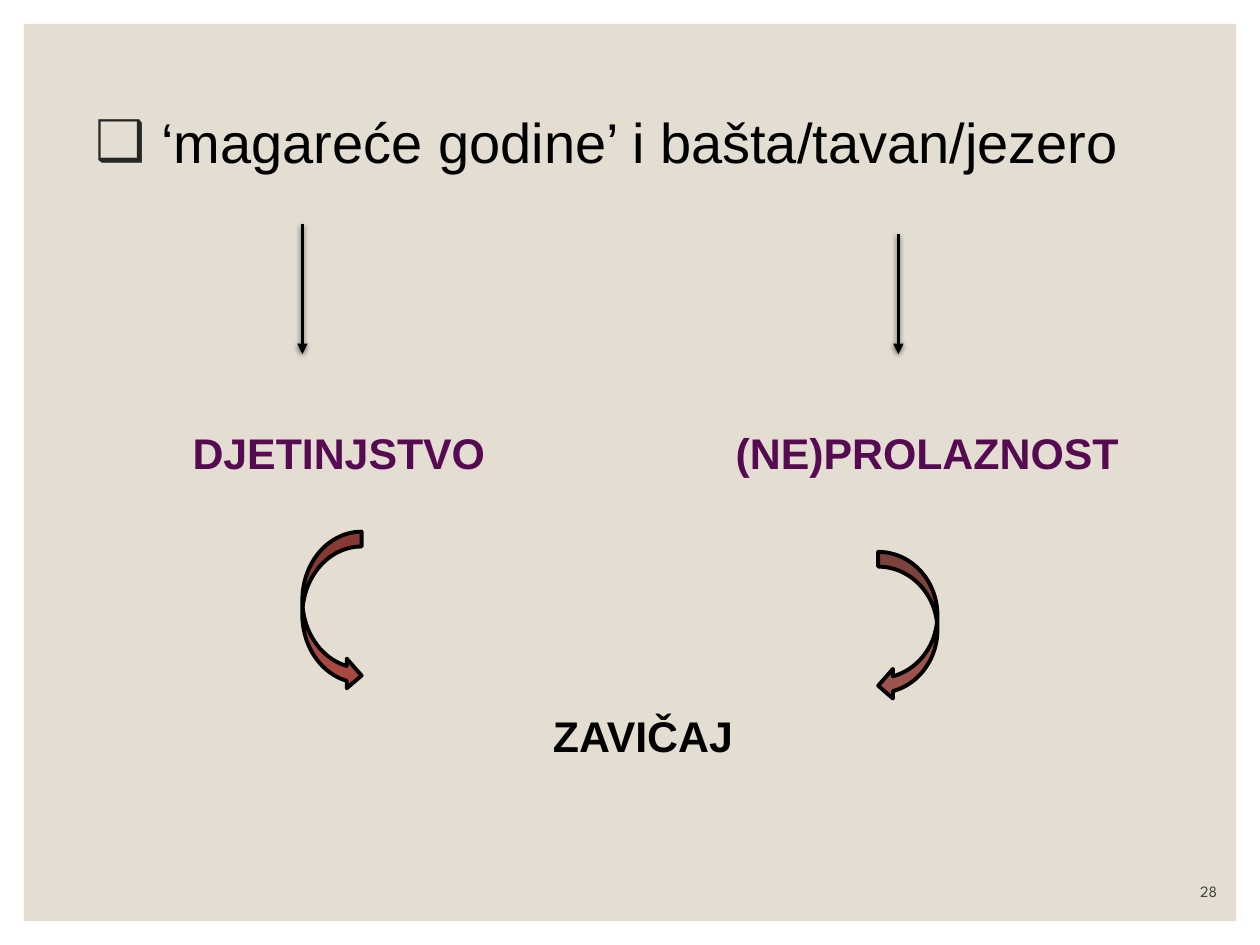
from lxml import etree
from pptx import Presentation
from pptx.dml.color import RGBColor
from pptx.enum.shapes import MSO_CONNECTOR, MSO_SHAPE
from pptx.enum.text import MSO_ANCHOR, MSO_AUTO_SIZE, PP_ALIGN
from pptx.oxml import parse_xml
from pptx.oxml.ns import nsdecls, qn
from pptx.util import Inches, Pt

BLACK = RGBColor(0x00, 0x00, 0x00)
SAND = RGBColor(0xE3, 0xDE, 0xD1)
PURPLE = RGBColor(0x56, 0x0A, 0x51)
GRAY = RGBColor(0x40, 0x40, 0x40)
BRICK = RGBColor(0xA9, 0x48, 0x41)
ROSE = RGBColor(0x9D, 0x53, 0x4D)

# Content
HEADING = "‘magareće godine’ i bašta/tavan/jezero"
BULLET, BULLET_COLOR = "❑", "262626"
PAGE_NUMBER = "28"

# Labels: text, left, top, width, colour
LABELS = [
    ("DJETINJSTVO", 1.43, 3.34, 2.8, PURPLE),
    ("(NE)PROLAZNOST", 5.74, 3.34, 3.46, PURPLE),
    ("ZAVIČAJ", 4.29, 5.58, 1.9, BLACK),
]
LABEL_HEIGHT = 0.5

# Straight arrows: x, top; they end on one level
DOWN_ARROWS = [(2.4, 1.78), (7.13, 1.86)]
ARROW_END = 2.81

# Curved arrows: shape, left, top, height, fill
CURVED_ARROWS = [
    (MSO_SHAPE.CURVED_RIGHT_ARROW, 2.4, 4.22, 1.26, BRICK),
    (MSO_SHAPE.CURVED_LEFT_ARROW, 6.97, 4.38, 1.18, ROSE),
]
CURVED_WIDTH = 0.47


def box(*lengths):
    return [Inches(length) for length in lengths]


def add_run(paragraph, text, size, color, font, bold=False):
    run = paragraph.add_run()
    run.text = text
    run.font.size = Pt(size)
    run.font.name = font
    run.font.bold = bold
    run.font.color.rgb = color


def add_bullet(paragraph, indent):
    props = paragraph._p.get_or_add_pPr()
    props.set("marL", str(Inches(indent)))
    props.set("indent", str(-Inches(indent)))
    color = etree.SubElement(props, qn("a:buClr"))
    etree.SubElement(color, qn("a:srgbClr"), val=BULLET_COLOR)
    etree.SubElement(props, qn("a:buChar"), char=BULLET)


prs = Presentation()
prs.slide_width, prs.slide_height = box(10, 7.5)
slide = prs.slides.add_slide(prs.slide_layouts[1])
shapes = slide.shapes
title, body = slide.placeholders
title.element.getparent().remove(title.element)

# Background panel, behind the text
panel = shapes.add_shape(MSO_SHAPE.RECTANGLE, *box(0.19, 0.19, 9.62, 7.12))
panel.shadow.inherit = False
panel.fill.solid()
panel.fill.fore_color.rgb = SAND
panel.line.fill.background()
body.element.addprevious(panel.element)

# Bulleted heading
body.left, body.top, body.width, body.height = box(0.66, 0.91, 8.53, 0.75)
frame = body.text_frame
frame.auto_size = MSO_AUTO_SIZE.NONE
frame.vertical_anchor = MSO_ANCHOR.TOP
heading = frame.paragraphs[0]
heading.line_spacing = 0.8
heading.space_before = Pt(9)
add_bullet(heading, 0.52)
add_run(heading, HEADING, 32, BLACK, "Arial")

# Labels
for text, left, top, width, color in LABELS:
    label = shapes.add_textbox(*box(left, top, width, LABEL_HEIGHT)).text_frame
    label.word_wrap = True
    add_run(label.paragraphs[0], text, 24.5, color, "Arial", bold=True)

# Straight arrows
for x, top in DOWN_ARROWS:
    arrow = shapes.add_connector(MSO_CONNECTOR.STRAIGHT, *box(x, top, x, ARROW_END))
    arrow.line.color.rgb = BLACK
    arrow.line.width = Pt(1.5)
    etree.SubElement(arrow.line._get_or_add_ln(), qn("a:tailEnd"), type="triangle")
    arrow.element.spPr.append(parse_xml(
        f'<a:effectLst {nsdecls("a")}>'
        f'<a:outerShdw blurRad="{Pt(3)}" dist="{Pt(1)}" dir="5400000" rotWithShape="0">'
        '<a:srgbClr val="000000"><a:alpha val="63000"/></a:srgbClr>'
        '</a:outerShdw></a:effectLst>'))

# Curved arrows
for kind, left, top, height, color in CURVED_ARROWS:
    curve = shapes.add_shape(kind, *box(left, top, CURVED_WIDTH, height))
    curve.shadow.inherit = False
    curve.fill.solid()
    curve.fill.fore_color.rgb = color
    curve.line.color.rgb = BLACK
    curve.line.width = Pt(2.25)

# Page number
page = shapes.add_textbox(*box(8.56, 6.9, 1.2, 0.3)).text_frame
page.word_wrap = True
page.vertical_anchor = MSO_ANCHOR.BOTTOM
page.paragraphs[0].alignment = PP_ALIGN.RIGHT
add_run(page.paragraphs[0], PAGE_NUMBER, 9, GRAY, "League Spartan")

prs.save("out.pptx")
